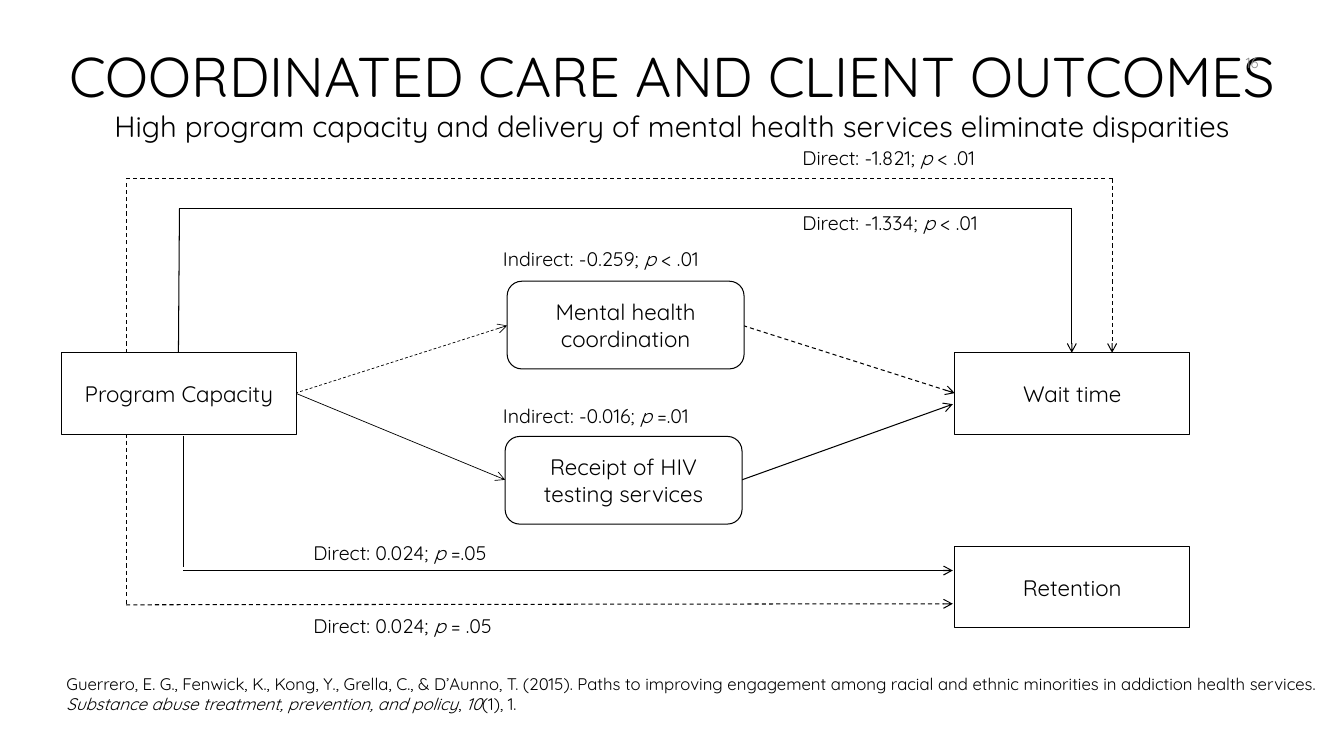
from dataclasses import dataclass

from lxml import etree
from pptx import Presentation
from pptx.dml.color import RGBColor
from pptx.enum import dml, shapes, text
from pptx.oxml import ns
from pptx.util import Inches, Pt

FONT = "Quicksand"
BLACK, WHITE, GRAY = "000000", "FFFFFF", "8C8C8C"
RECT = shapes.MSO_SHAPE.RECTANGLE
ROUND = shapes.MSO_SHAPE.ROUNDED_RECTANGLE
LEFT, MID, RIGHT = text.PP_ALIGN.LEFT, text.PP_ALIGN.CENTER, text.PP_ALIGN.RIGHT


@dataclass
class Box:
    label: str
    x: float
    y: float
    kind: int = RECT
    w: float = 2.33
    h: float = 0.81


@dataclass
class Path:
    """A chain of straight segments through the given points."""
    points: list[tuple[float, float]]
    dash: bool = False
    arrow: bool = True
    width: float = 0.75


@dataclass
class Note:
    """Text in which asterisks enclose italics."""
    words: str
    x: float
    y: float
    w: float
    h: float = 0.37
    size: float = 14
    tint: str = BLACK
    align: int = LEFT
    anchor: int = text.MSO_ANCHOR.TOP


BOXES = [
    Box("Program Capacity", 0.61, 3.5),
    Box("Mental health coordination", 5.03, 2.79, ROUND, 2.35, 0.87),
    Box("Receipt of HIV testing services", 5.01, 4.33, ROUND, 2.35, 0.87),
    Box("Wait time", 9.47, 3.5),
    Box("Retention", 9.47, 5.42),
]

PATHS = [
    Path([(2.93, 3.9), (5.03, 3.23)], dash=True, width=0.5),
    Path([(2.93, 3.9), (5.01, 4.76)], width=0.5),
    Path([(7.37, 3.23), (9.47, 3.9)], dash=True),
    Path([(7.36, 4.76), (9.45, 4.01)]),
    Path([(1.77, 3.5), (1.78, 2.07), (10.63, 2.07), (10.63, 3.5)]),
    Path([(1.25, 3.5), (1.25, 1.77), (11.03, 1.77), (11.03, 3.5)], dash=True),
    Path([(1.82, 4.33), (1.82, 5.63)], arrow=False),
    Path([(1.82, 5.66), (9.45, 5.66)]),
    Path([(1.25, 4.3), (1.25, 6.0), (9.45, 5.99)], dash=True),
]

NOTES = [
    Note("16", 9.58, 0.42, 3, 0.4, 10.5, GRAY, RIGHT, text.MSO_ANCHOR.MIDDLE),
    Note("Direct: -1.821; *p* < .01", 7.86, 1.4, 2.65),
    Note("Direct: -1.334; *p* < .01", 7.86, 2.04, 2.65),
    Note("Indirect: -0.259; *p* < .01", 4.89, 2.4, 2.76),
    Note("Indirect: -0.016; *p* =.01", 4.89, 3.96, 2.89),
    Note("Direct: 0.024; *p* =.05", 3.01, 5.32, 2.76),
    Note("Direct: 0.024; *p* = .05", 3.01, 6.04, 2.49),
    Note("Guerrero, E. G., Fenwick, K., Kong, Y., Grella, C., & D’Aunno, T. (2015). "
         "Paths to improving engagement among racial and ethnic minorities in "
         "addiction health services. *Substance abuse treatment, prevention, and "
         "policy*, *10*(1), 1.", 0.56, 6.63, 12.71, 0.5, 12),
]


def color(code: str) -> RGBColor:
    return RGBColor.from_string(code)


def style(para, size: float, tint: str = BLACK, align: int = MID) -> None:
    para.alignment = align
    for run in para.runs:
        run.font.name = FONT
        run.font.size = Pt(size)
        run.font.color.rgb = color(tint)


def draw_box(slide, box: Box) -> None:
    shape = slide.shapes.add_shape(
        box.kind, Inches(box.x), Inches(box.y), Inches(box.w), Inches(box.h))
    shape.shadow.inherit = False
    shape.fill.solid()
    shape.fill.fore_color.rgb = color(WHITE)
    shape.line.color.rgb = color(BLACK)
    shape.line.width = Pt(0.75)
    frame = shape.text_frame
    frame.word_wrap = True
    frame.vertical_anchor = text.MSO_ANCHOR.MIDDLE
    frame.text = box.label
    style(frame.paragraphs[0], 16)


def draw_path(slide, path: Path) -> None:
    for start, end in zip(path.points, path.points[1:]):
        link = slide.shapes.add_connector(
            shapes.MSO_CONNECTOR.STRAIGHT, *map(Inches, start + end))
        link.line.color.rgb = color(BLACK)
        link.line.width = Pt(path.width)
        if path.dash:
            link.line.dash_style = dml.MSO_LINE.DASH
        if path.arrow and end == path.points[-1]:
            tip = etree.SubElement(link.line._get_or_add_ln(), ns.qn("a:tailEnd"))
            tip.set("type", "arrow")
        etree.SubElement(link._element.spPr, ns.qn("a:effectLst"))


def draw_note(slide, note: Note) -> None:
    shape = slide.shapes.add_textbox(
        Inches(note.x), Inches(note.y), Inches(note.w), Inches(note.h))
    frame = shape.text_frame
    frame.word_wrap = True
    frame.vertical_anchor = note.anchor
    para = frame.paragraphs[0]
    for i, part in enumerate(note.words.split("*")):
        run = para.add_run()
        run.text = part
        run.font.italic = i % 2 == 1
    style(para, note.size, note.tint, note.align)


def set_title(slide) -> None:
    title = slide.shapes.title
    title.left, title.top = Inches(0), Inches(0.36)
    title.width, title.height = Inches(13.33), Inches(1.48)
    frame = title.text_frame
    frame.word_wrap = True
    frame.auto_size = text.MSO_AUTO_SIZE.NONE
    frame.vertical_anchor = text.MSO_ANCHOR.TOP
    frame.text = ("COORDINATED CARE AND CLIENT OUTCOMES\n"
                  "High program capacity and delivery of mental health services "
                  "eliminate disparities")
    for para, size in zip(frame.paragraphs, (40, 21)):
        style(para, size)


def main() -> None:
    deck = Presentation()
    deck.slide_width, deck.slide_height = Inches(13.33), Inches(7.5)
    slide = deck.slides.add_slide(deck.slide_layouts[5])
    set_title(slide)
    for path in PATHS:
        draw_path(slide, path)
    for box in BOXES:
        draw_box(slide, box)
    for note in NOTES:
        draw_note(slide, note)
    deck.save("out.pptx")


if __name__ == "__main__":
    main()
